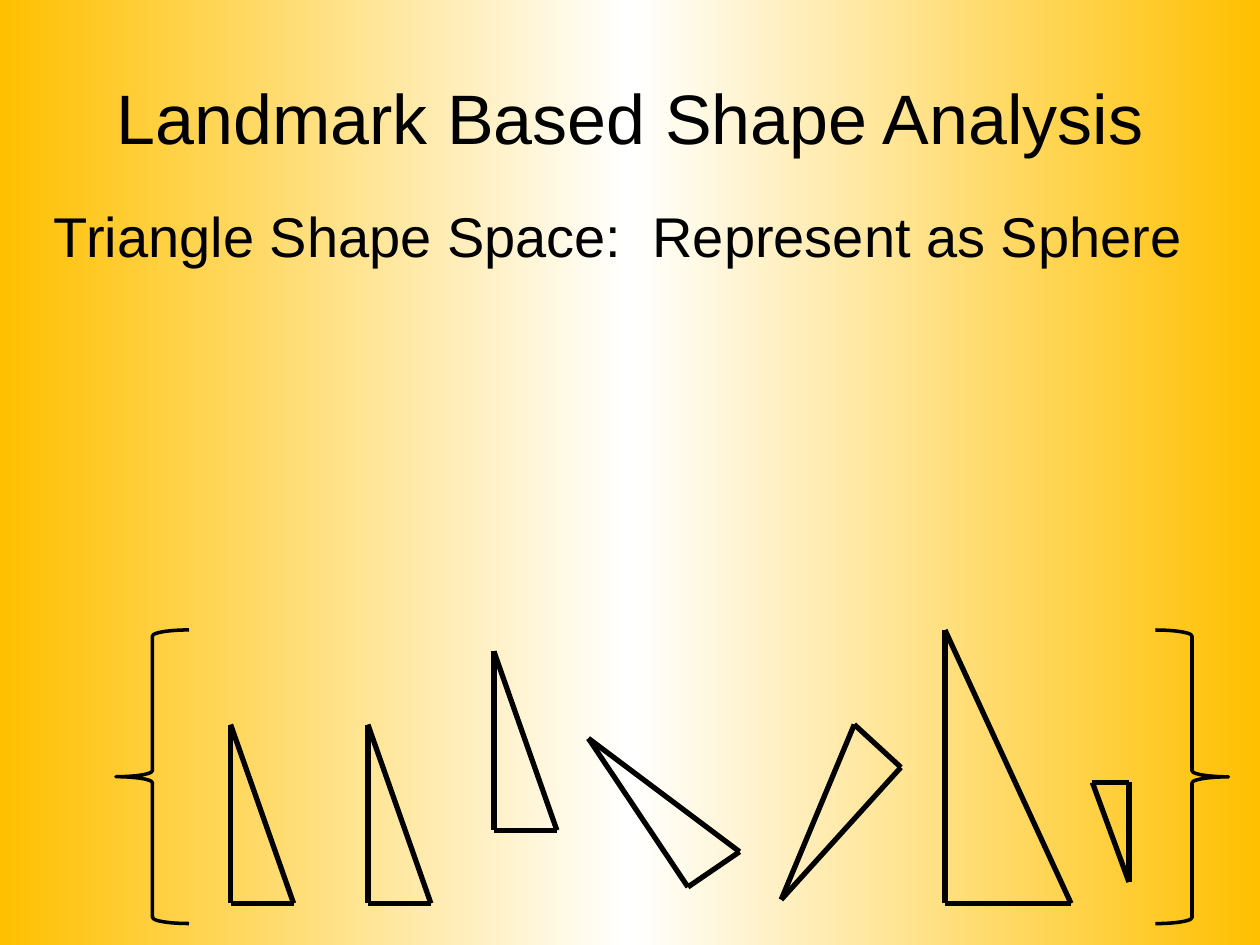
"""Builds a slide on triangle shape space, with equivalent triangles between braces."""
from copy import deepcopy
from itertools import combinations

from lxml import etree
from pptx import Presentation
from pptx.dml.color import RGBColor
from pptx.enum import shapes, text
from pptx.oxml.ns import qn
from pptx.util import Inches, Pt

COLORS = {"ink": "000000", "gold": "FFC000", "white": "FFFFFF"}
BACKGROUND = [(0, "gold"), (0.5, "white"), (1, "gold")]
TITLE = "Landmark Based Shape Analysis"
SUBTITLE = "Triangle Shape Space:  Represent as Sphere"


def upright(left, top, width=0.5, height=1.42):
    """Return the corners of a right triangle: apex, foot and toe."""
    return [(left, top), (left, top + height), (left + width, top + height)]


TRIANGLES = [
    upright(1.83, 5.75),
    upright(2.92, 5.75),
    upright(3.92, 5.17),
    [(4.67, 5.86), (5.46, 7.04), (5.87, 6.76)],
    [(6.2, 7.14), (7.15, 6.09), (6.78, 5.75)],
    upright(7.5, 5, 1, 2.17),
    [(8.96, 7), (8.96, 6.21), (8.67, 6.21)],
]
BRACES = [(0.92, 0), (9.17, 180)]
BRACE_TOP, BRACE_WIDTH, BRACE_HEIGHT = 5, 0.58, 2.33


def color(name):
    return RGBColor.from_string(COLORS[name])


def paint_background(slide):
    fill = slide.background.fill
    fill.gradient()
    fill.gradient_angle = 0
    stops = slide.element.find(".//" + qn("a:gsLst"))
    stops.append(deepcopy(stops[0]))
    for stop, (position, name) in zip(fill.gradient_stops, BACKGROUND):
        stop.position = position
        stop.color.rgb = color(name)


def add_text(slide, words, box, size, align=text.PP_ALIGN.LEFT,
             anchor=text.MSO_ANCHOR.TOP, line_spacing=1.0, space_before=0):
    frame = slide.shapes.add_textbox(*map(Inches, box)).text_frame
    frame.word_wrap = True
    frame.vertical_anchor = anchor
    paragraph = frame.paragraphs[0]
    paragraph.alignment = align
    paragraph.line_spacing = line_spacing
    paragraph.space_before = Pt(space_before)
    run = paragraph.add_run()
    run.text = words
    run.font.name = "Arial"
    run.font.size = Pt(size)
    run.font.color.rgb = color("ink")


def add_triangle(slide, corners):
    triangle = slide.shapes.add_group_shape()
    for start, end in combinations(corners, 2):
        side = triangle.shapes.add_connector(
            shapes.MSO_CONNECTOR.STRAIGHT, *map(Inches, start + end))
        side.line.color.rgb = color("ink")
        side.line.width = Pt(3)
        etree.SubElement(side.element.spPr, qn("a:effectLst"))


def add_brace(slide, left, rotation):
    brace = slide.shapes.add_shape(
        shapes.MSO_SHAPE.LEFT_BRACE,
        *map(Inches, (left, BRACE_TOP, BRACE_WIDTH, BRACE_HEIGHT)))
    brace.rotation = rotation
    brace.shadow.inherit = False
    brace.fill.background()
    brace.line.color.rgb = color("ink")
    brace.line.width = Pt(2)


def main():
    deck = Presentation()
    deck.slide_width, deck.slide_height = Inches(10), Inches(7.5)
    slide = deck.slides.add_slide(deck.slide_layouts[6])
    paint_background(slide)
    add_text(slide, TITLE, (0.5, 0.3, 9, 1.25), 40,
             align=text.PP_ALIGN.CENTER, anchor=text.MSO_ANCHOR.MIDDLE)
    add_text(slide, SUBTITLE, (0.33, 1.5, 9.21, 5.67), 32,
             line_spacing=1.1, space_before=4)
    for corners in TRIANGLES:
        add_triangle(slide, corners)
    for left, rotation in BRACES:
        add_brace(slide, left, rotation)
    deck.save("out.pptx")


if __name__ == "__main__":
    main()
